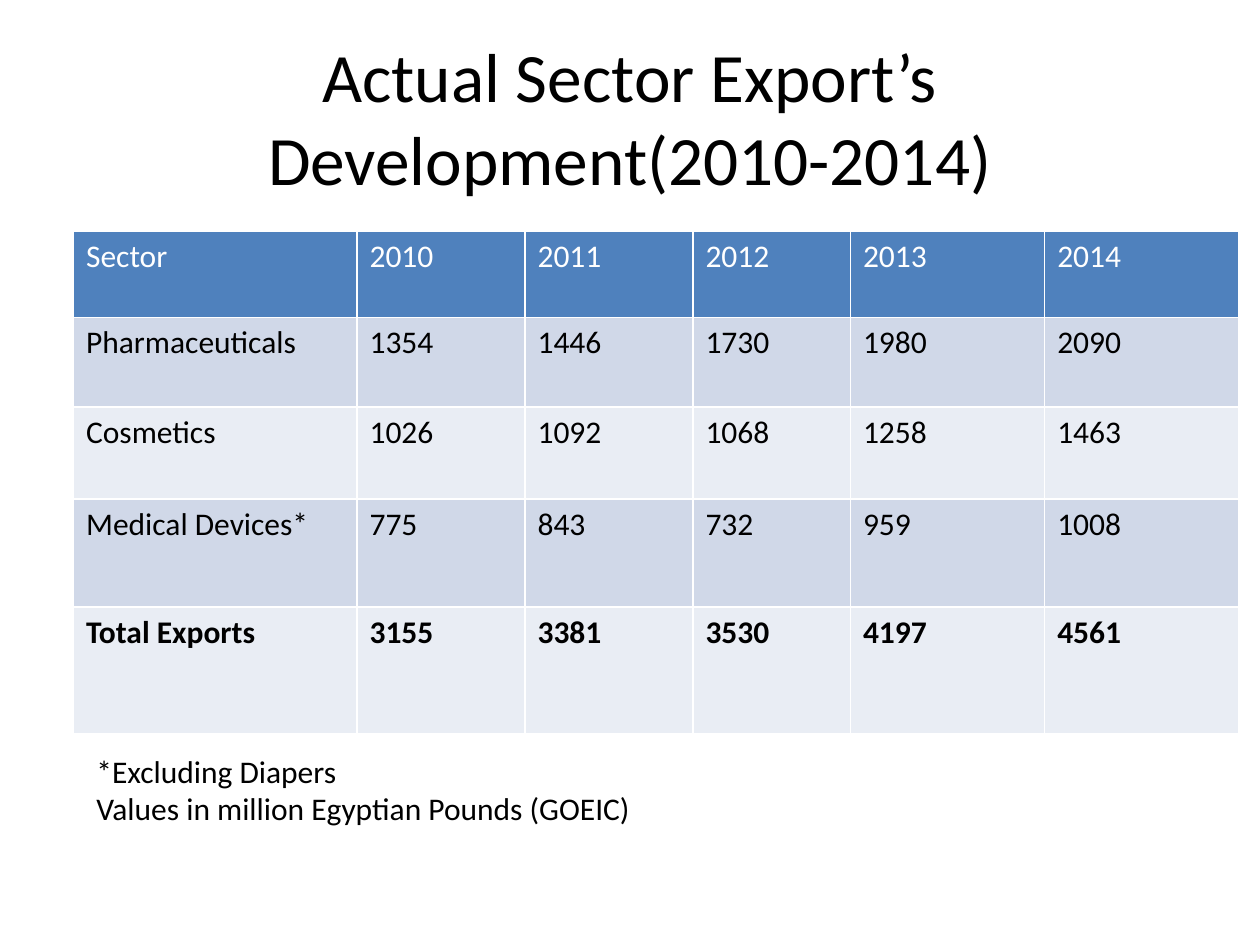
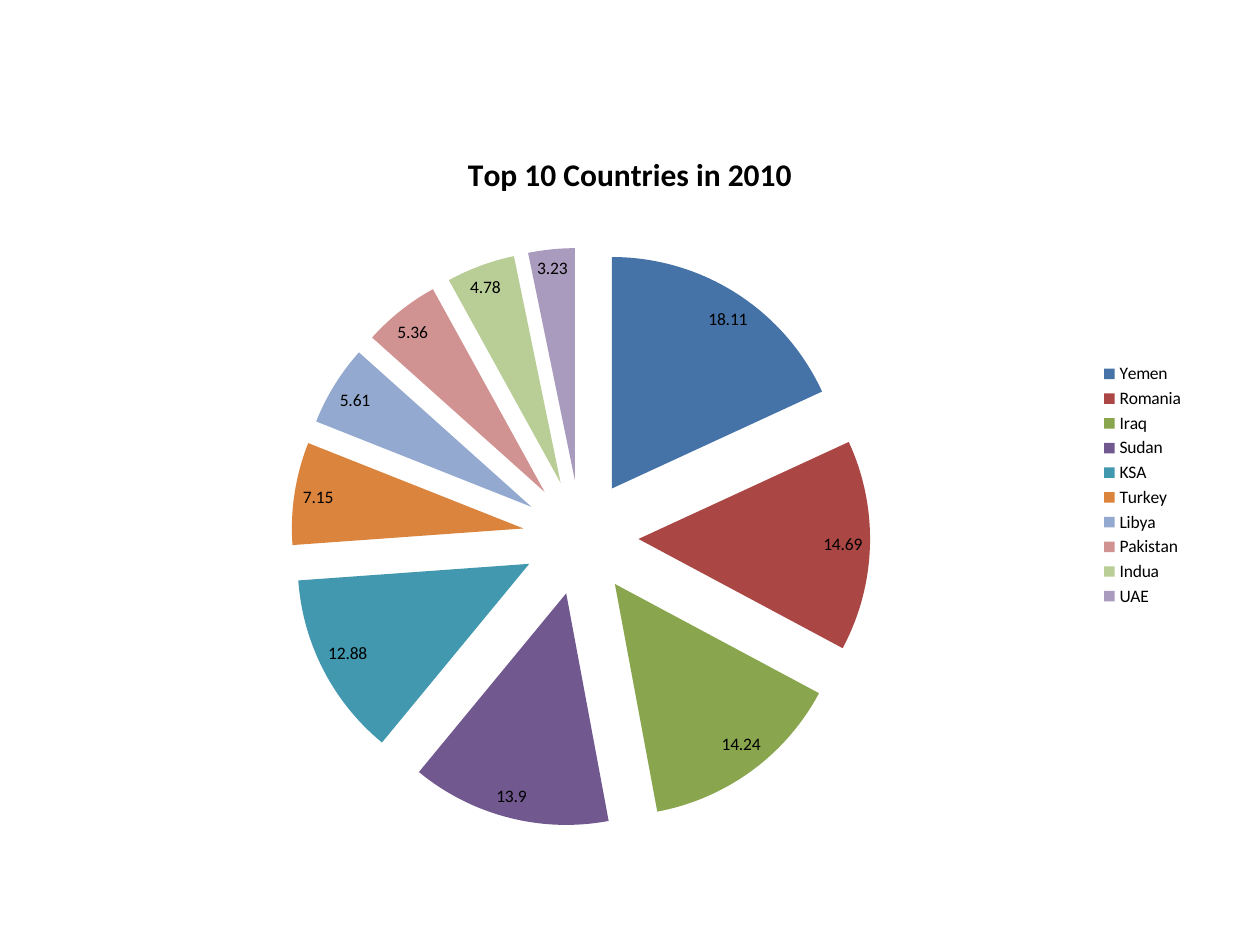
from dataclasses import dataclass

from lxml.etree import Element
from pptx import Presentation
from pptx.chart.data import CategoryChartData
from pptx.dml.color import RGBColor
from pptx.enum.chart import XL_CHART_TYPE, XL_LABEL_POSITION, XL_LEGEND_POSITION
from pptx.enum.text import MSO_ANCHOR, MSO_AUTO_SIZE, PP_ALIGN
from pptx.oxml.ns import qn
from pptx.util import Pt

# Content
EXPORT_TITLE = "Actual Sector Export’s Development(2010-2014)"
EXPORT_ROWS = [
    ("Sector", "2010", "2011", "2012", "2013", "2014"),
    ("Pharmaceuticals", "1354", "1446", "1730", "1980", "2090"),
    ("Cosmetics", "1026", "1092", "1068", "1258", "1463"),
    ("Medical Devices*", "775", "843", "732", "959", "1008"),
    ("Total Exports", "3155", "3381", "3530", "4197", "4561"),
]
EXPORT_NOTES = ["*Excluding Diapers", "Values in million Egyptian Pounds (GOEIC)"]
COUNTRY_TITLE = "Top 10 Countries in 2010"
COUNTRIES = [  # name, share, slice colour
    ("Yemen", 18.11, "4572A7"),
    ("Romania", 14.69, "AA4643"),
    ("Iraq", 14.24, "89A54E"),
    ("Sudan", 13.9, "71588F"),
    ("KSA", 12.88, "4198AF"),
    ("Turkey", 7.15, "DB843D"),
    ("Libya", 5.61, "93A9CF"),
    ("Pakistan", 5.36, "D19392"),
    ("Indua", 4.78, "B9CD96"),
    ("UAE", 3.23, "A99BBD"),
]

# Layout in points
COLUMN_WIDTHS = (162, 96, 96, 90, 111, 111)
ROW_HEIGHTS = (49.5, 51, 52.75, 61.75, 72.5)
SLICE_EXPLOSION = 25


@dataclass(frozen=True)
class Theme:
    font: str = "Calibri"
    text: str = "000000"
    header_text: str = "FFFFFF"
    header_fill: str = "4F81BD"
    band_fills: tuple = ("D0D8E8", "E9EDF4")
    title_size: float = 39.6
    body_size: int = 18
    chart_size: int = 10


THEME = Theme()


def style_font(font, size, color=THEME.text, bold=False):
    font.name = THEME.font
    font.size = Pt(size)
    font.bold = bold
    font.color.rgb = RGBColor.from_string(color)


def add_run(paragraph, text, size, **style):
    run = paragraph.add_run()
    run.text = text
    style_font(run.font, size, **style)


def place(shape, left, top, width, height):
    shape.left, shape.top, shape.width, shape.height = map(Pt, (left, top, width, height))


def add_export_table(slide):
    table = slide.shapes.add_table(
        len(EXPORT_ROWS), len(COLUMN_WIDTHS),
        Pt(42), Pt(132), Pt(sum(COLUMN_WIDTHS)), Pt(sum(ROW_HEIGHTS))).table
    for column, width in zip(table.columns, COLUMN_WIDTHS):
        column.width = Pt(width)
    for row_index, (values, height) in enumerate(zip(EXPORT_ROWS, ROW_HEIGHTS)):
        table.rows[row_index].height = Pt(height)
        is_header = row_index == 0
        is_total = row_index == len(EXPORT_ROWS) - 1
        fill = THEME.header_fill if is_header else THEME.band_fills[(row_index - 1) % 2]
        color = THEME.header_text if is_header else THEME.text
        for cell, value in zip(table.rows[row_index].cells, values):
            cell.fill.solid()
            cell.fill.fore_color.rgb = RGBColor.from_string(fill)
            add_run(cell.text_frame.paragraphs[0], value, THEME.body_size,
                    color=color, bold=is_total)


def build_export_slide(presentation):
    slide = presentation.slides.add_slide(presentation.slide_layouts[5])

    # Title
    title = slide.shapes.title
    place(title, 36, 21.6, 648, 90)
    title.text_frame.vertical_anchor = MSO_ANCHOR.MIDDLE
    paragraph = title.text_frame.paragraphs[0]
    paragraph.alignment = PP_ALIGN.CENTER
    add_run(paragraph, EXPORT_TITLE, THEME.title_size)

    add_export_table(slide)

    # Notes below the table
    frame = slide.shapes.add_textbox(Pt(48), Pt(426), Pt(402), Pt(51)).text_frame
    frame.word_wrap = True
    frame.auto_size = MSO_AUTO_SIZE.SHAPE_TO_FIT_TEXT
    for index, note in enumerate(EXPORT_NOTES):
        paragraph = frame.add_paragraph() if index else frame.paragraphs[0]
        add_run(paragraph, note, THEME.body_size)


def build_country_slide(presentation):
    slide = presentation.slides.add_slide(presentation.slide_layouts[6])
    names, shares, colors = zip(*COUNTRIES)
    data = CategoryChartData()
    data.categories = names
    data.add_series("Series 1", shares)
    chart = slide.shapes.add_chart(
        XL_CHART_TYPE.PIE, Pt(36), Pt(72), Pt(648), Pt(410.4), data).chart
    style_font(chart.font, THEME.chart_size)

    # Title and legend
    chart.has_title = True
    add_run(chart.chart_title.text_frame.paragraphs[0], COUNTRY_TITLE,
            THEME.body_size, bold=True)
    chart.has_legend = True
    chart.legend.position = XL_LEGEND_POSITION.RIGHT
    chart.legend.include_in_layout = False

    # Slices and their values
    plot = chart.plots[0]
    plot.vary_by_categories = True
    plot.has_data_labels = True
    plot.data_labels.show_value = True
    plot.data_labels.show_percentage = False
    plot.data_labels.position = XL_LABEL_POSITION.BEST_FIT
    style_font(plot.data_labels.font, THEME.chart_size)
    series = plot.series[0]
    for index, color in enumerate(colors):
        fill = series.points[index].format.fill
        fill.solid()
        fill.fore_color.rgb = RGBColor.from_string(color)
    explosion = Element(qn("c:explosion"), val=str(SLICE_EXPLOSION))
    series._element.find(qn("c:dPt")).addprevious(explosion)


def main():
    presentation = Presentation()
    presentation.slide_width, presentation.slide_height = Pt(720), Pt(540)
    build_export_slide(presentation)
    build_country_slide(presentation)
    presentation.save("out.pptx")


if __name__ == "__main__":
    main()
